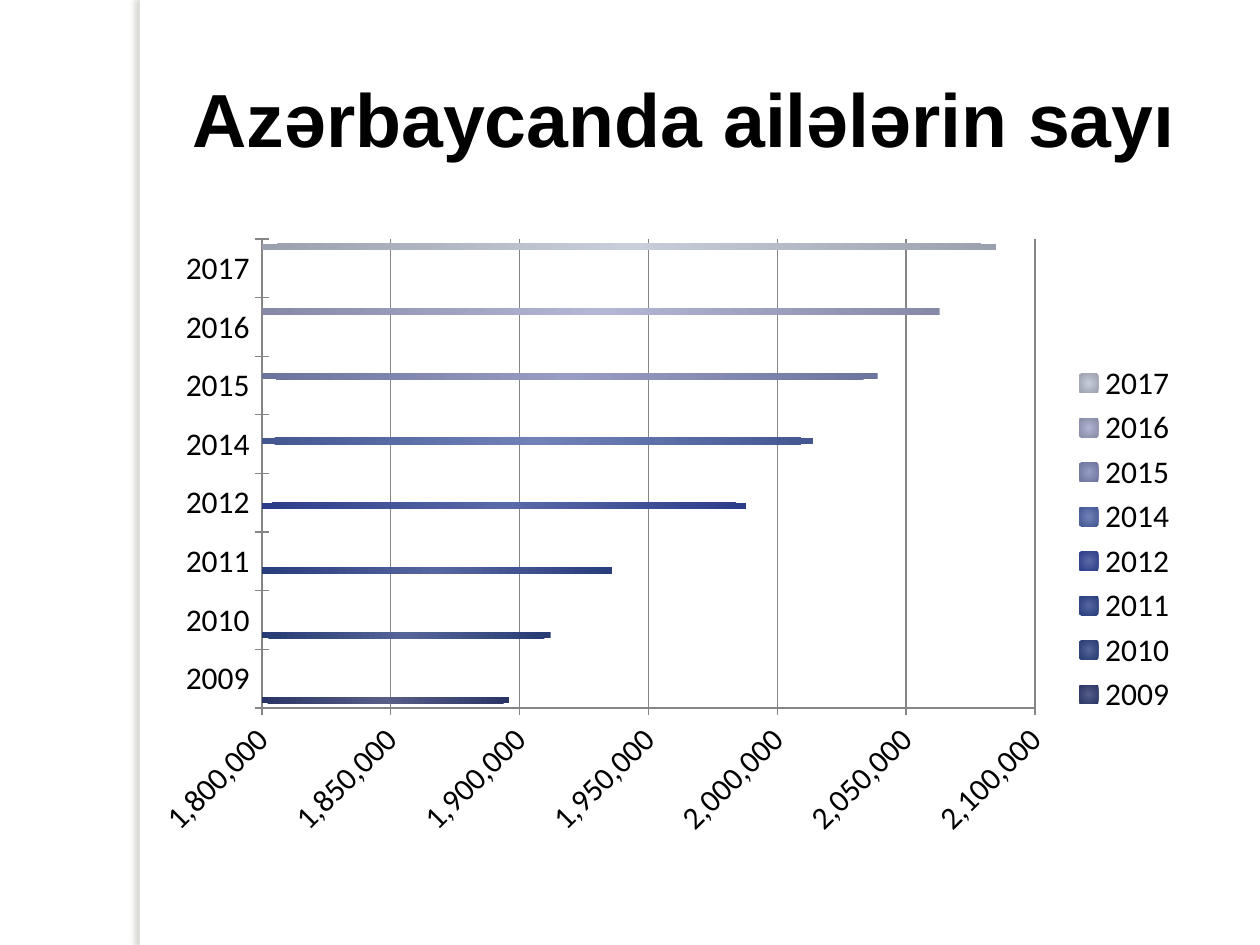
from lxml.etree import SubElement
from pptx import Presentation
from pptx.chart.data import CategoryChartData
from pptx.dml.color import RGBColor
from pptx.enum.chart import XL_CHART_TYPE, XL_LEGEND_POSITION, XL_TICK_MARK
from pptx.enum.shapes import MSO_SHAPE
from pptx.enum.text import MSO_ANCHOR, PP_ALIGN
from pptx.oxml import parse_xml
from pptx.oxml.ns import nsdecls, qn
from pptx.util import Pt

PX = 914400 // 126
WHITE = RGBColor(0xFF, 0xFF, 0xFF)
BLACK = RGBColor(0, 0, 0)
GREY = RGBColor(0x86, 0x86, 0x86)

# year, families, centre colour, edge colour
ROWS = [
    ("2009", 1896000, RGBColor(0x56, 0x5E, 0x88), RGBColor(0x2A, 0x35, 0x66)),
    ("2010", 1912000, RGBColor(0x55, 0x65, 0x98), RGBColor(0x26, 0x3A, 0x73)),
    ("2011", 1936000, RGBColor(0x56, 0x66, 0xA0), RGBColor(0x28, 0x3D, 0x7C)),
    ("2012", 1988000, RGBColor(0x5A, 0x69, 0xA8), RGBColor(0x2B, 0x3D, 0x88)),
    ("2014", 2014000, RGBColor(0x70, 0x82, 0xB8), RGBColor(0x44, 0x57, 0x91)),
    ("2015", 2039000, RGBColor(0x97, 0x9D, 0xC5), RGBColor(0x6C, 0x73, 0x9C)),
    ("2016", 2063000, RGBColor(0xB3, 0xB6, 0xD4), RGBColor(0x87, 0x8A, 0xA6)),
    ("2017", 2085000, RGBColor(0xC9, 0xCE, 0xDD), RGBColor(0x9B, 0xA0, 0xAE)),
]


def scale(*lengths):
    """Turn px into EMU."""
    return [n * PX for n in lengths]


prs = Presentation()
prs.slide_width, prs.slide_height = scale(1260, 945)
slide = prs.slides.add_slide(prs.slide_layouts[6])
slide.background.fill.solid()
slide.background.fill.fore_color.rgb = WHITE

# Side strip with a soft shadow to the left
strip = slide.shapes.add_shape(MSO_SHAPE.RECTANGLE, *scale(140, 0, 10, 945))
strip.fill.solid()
strip.fill.fore_color.rgb = WHITE
strip.line.fill.background()
strip._element.spPr.append(parse_xml(
    f'<a:effectLst {nsdecls("a")}><a:outerShdw blurRad="38100" dist="38100" '
    'dir="10800000" algn="tl" rotWithShape="0"><a:srgbClr val="736F63">'
    '<a:alpha val="25000"/></a:srgbClr></a:outerShdw></a:effectLst>'))

# Title
title = slide.shapes.add_textbox(*scale(157, 38, 1053, 158)).text_frame
title.word_wrap = True
title.vertical_anchor = MSO_ANCHOR.MIDDLE
para = title.paragraphs[0]
para.text = "Azərbaycanda ailələrin sayı"
para.alignment = PP_ALIGN.CENTER
para.font.name = "Arial"
para.font.size = Pt(43)
para.font.bold = True
para.font.color.rgb = BLACK

# Chart: one series per year, each with a single bar
data = CategoryChartData(number_format="#,##0")
data.categories = [row[0] for row in ROWS]
for i, (year, count, *_) in enumerate(ROWS):
    data.add_series(year, [count if i == j else None for j in range(len(ROWS))])
left, top, width, height = 137, 227, 1053, 624
chart = slide.shapes.add_chart(
    XL_CHART_TYPE.BAR_CLUSTERED, *scale(left, top, width, height), data).chart
chart.has_title = False
chart.font.name = "Calibri"
chart.font.size = Pt(18)
chart.font.color.rgb = BLACK
chart.has_legend = True
chart.legend.position = XL_LEGEND_POSITION.RIGHT
chart.legend.include_in_layout = False

plot = chart.plots[0]
plot.vary_by_categories = False
plot.gap_width = 150
plot.overlap = 0
for bars, (_, _, light, dark) in zip(plot.series, ROWS):
    bars.invert_if_negative = False
    fill = bars.format.fill
    fill.gradient()
    for stop, tint in zip(fill.gradient_stops, (light, dark)):
        stop.color.rgb = tint
    grad = bars._element.spPr.find(qn("a:gradFill"))
    grad.remove(grad.find(qn("a:lin")))
    ring = SubElement(grad, qn("a:path"), path="circle")
    SubElement(ring, qn("a:fillToRect"), l="50000", t="50000", r="50000", b="50000")

years, counts = chart.category_axis, chart.value_axis
for axis in (years, counts):
    axis.major_tick_mark = XL_TICK_MARK.CROSS
    axis.minor_tick_mark = XL_TICK_MARK.NONE
    axis.format.line.color.rgb = GREY
    axis.format.line.width = Pt(0.75)
    axis.tick_labels.font.size = Pt(18)
years.has_major_gridlines = False
counts.has_major_gridlines = True
counts.major_gridlines.format.line.color.rgb = GREY
counts.minimum_scale, counts.maximum_scale = 1800000, 2100000
counts.major_unit = 50000
counts.tick_labels.number_format = "#,##0"
counts.tick_labels.number_format_is_linked = False
counts._element.find(qn("c:txPr")).find(qn("a:bodyPr")).set("rot", "-2700000")

# Inner plot area, as fractions of the chart frame
area = chart._chartSpace.chart.plotArea
for old in area.findall(qn("c:layout")):
    area.remove(old)
layout = parse_xml(f'<c:layout {nsdecls("c")}><c:manualLayout/></c:layout>')
for tag, val in [
    ("layoutTarget", "inner"), ("xMode", "edge"), ("yMode", "edge"),
    ("x", (262 - left) / width), ("y", (239 - top) / height),
    ("w", 773 / width), ("h", 469 / height),
]:
    SubElement(layout[0], qn(f"c:{tag}"), val=str(val))
area.insert(0, layout)

prs.save("out.pptx")
